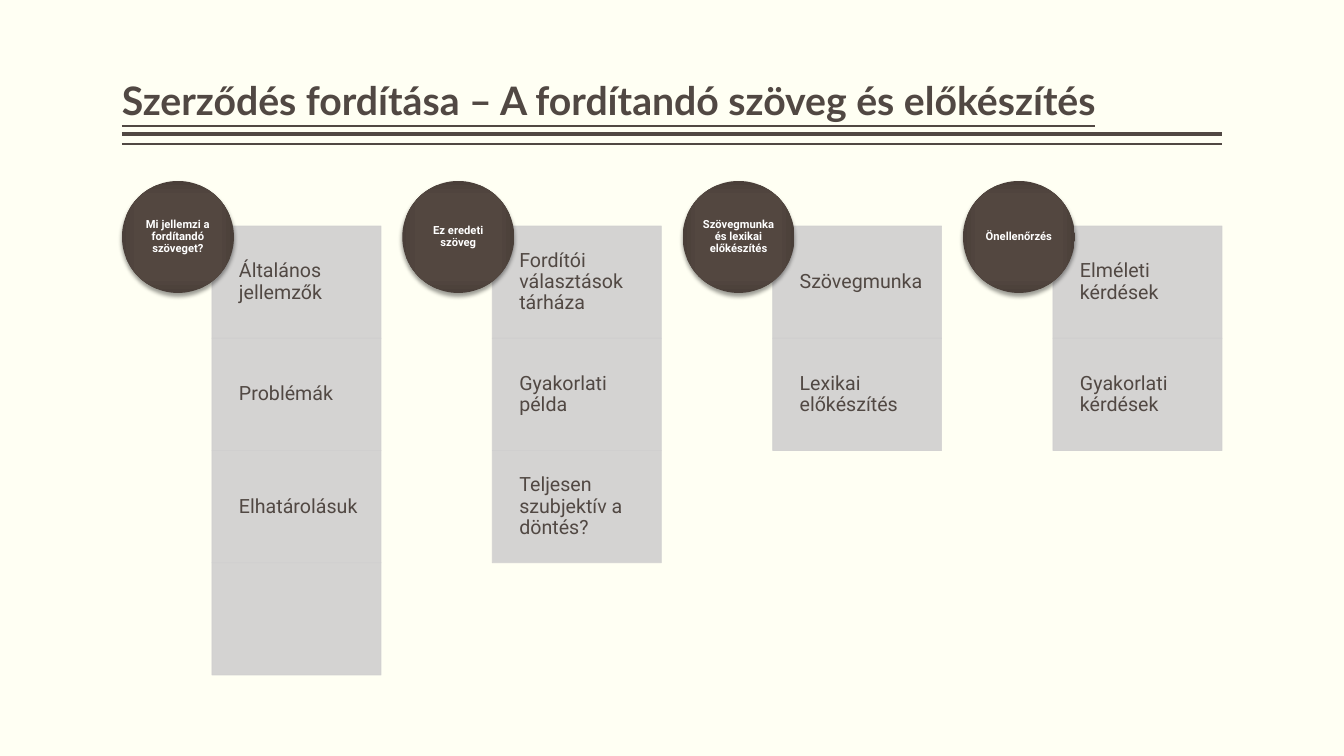
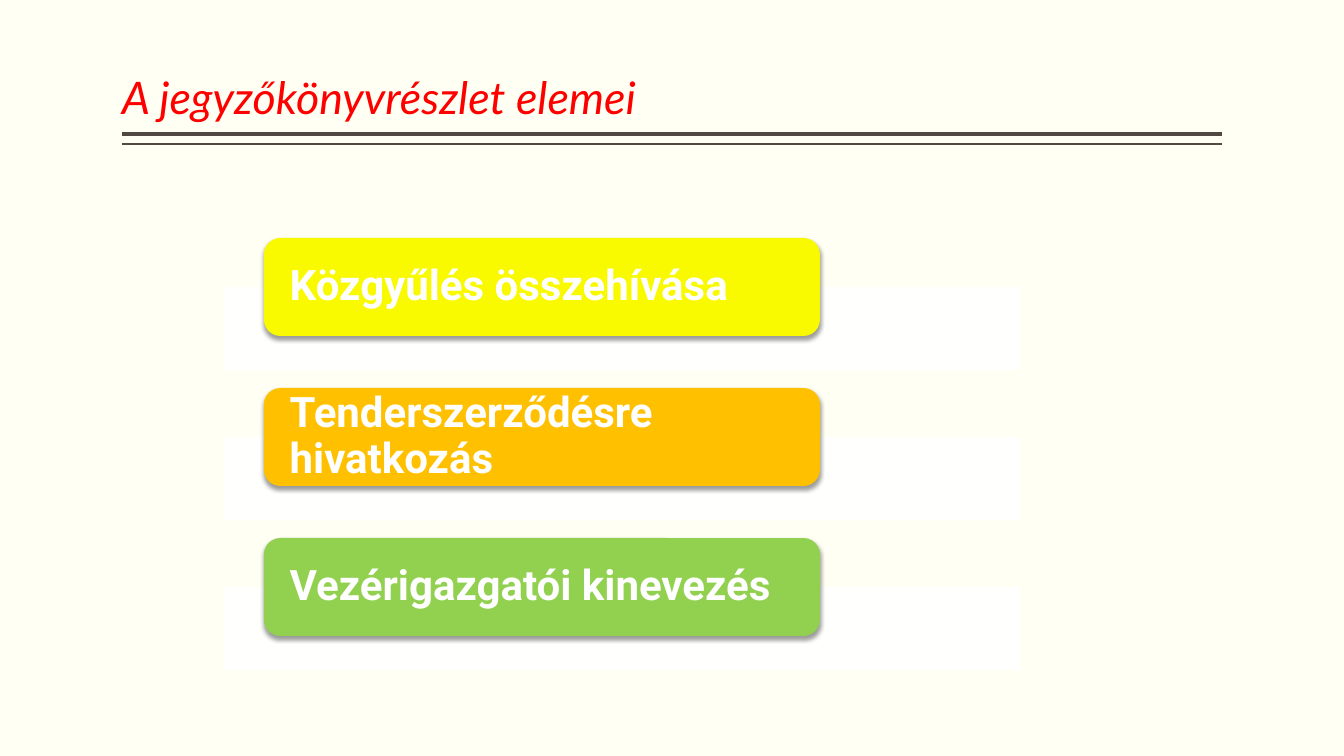
from pptx import Presentation
from pptx.dml.color import RGBColor
from pptx.enum.shapes import MSO_CONNECTOR, MSO_SHAPE as SHAPE
from pptx.enum.text import MSO_ANCHOR as ANCHOR, PP_ALIGN as ALIGN
from pptx.oxml import parse_xml
from pptx.oxml.ns import nsdecls, qn
from pptx.util import Pt
from lxml.etree import SubElement

CREAM = RGBColor(0xFF, 0xFF, 0xF3)
BROWN = RGBColor(0x51, 0x48, 0x43)
GREY = RGBColor(0xD0, 0xCF, 0xCF)
WHITE = RGBColor(0xFF, 0xFF, 0xFF)
RED = RGBColor(0xFF, 0x00, 0x00)
YELLOW = RGBColor(0xF9, 0xF9, 0x00)
ORANGE = RGBColor(0xFF, 0xC0, 0x00)
GREEN = RGBColor(0x92, 0xD0, 0x50)

PX = 914400 / 100.8
LEFT, WIDTH = 122, 1100

CIRCLE_FILL = f"""<a:gradFill {nsdecls('a')} rotWithShape="1"><a:gsLst>
<a:gs pos="0"><a:srgbClr val="544740"/></a:gs>
<a:gs pos="71000"><a:srgbClr val="534740"/></a:gs>
<a:gs pos="100000"><a:srgbClr val="4A3F39"/></a:gs></a:gsLst>
<a:path path="rect"><a:fillToRect l="50000" t="50000" r="50000" b="50000"/></a:path>
</a:gradFill>"""
SHADOW = f"""<a:outerShdw {nsdecls('a')} blurRad="39370" dist="25400" dir="5400000" rotWithShape="0">
<a:srgbClr val="000000"><a:alpha val="38000"/></a:srgbClr></a:outerShdw>"""


def write(sp, text, size=14, font="Roboto", color=WHITE, bold=False, italic=False,
          underline=False, align=ALIGN.LEFT, anchor=ANCHOR.MIDDLE, insets=(0, 0, 0, 0)):
    """Fill a shape with one paragraph; insets are left, top, right, bottom in px."""
    tf = sp.text_frame
    tf.word_wrap = True
    tf.vertical_anchor = anchor
    tf.margin_left, tf.margin_top, tf.margin_right, tf.margin_bottom = [
        round(n * PX) for n in insets]
    p = tf.paragraphs[0]
    p.alignment = align
    p.line_spacing = 0.9
    r = p.add_run()
    r.text = text
    r.font.size, r.font.name, r.font.color.rgb = Pt(size), font, color
    r.font.bold, r.font.italic, r.font.underline = bold, italic, underline


def add_box(s, kind, x, y, w, h, fill=None, line=None, alpha=None, shadow=False):
    """Add a preset shape; without a fill colour it gets the circle gradient."""
    sp = s.shapes.add_shape(kind, *[round(n * PX) for n in (x, y, w, h)])
    spPr = sp._element.spPr
    if fill is None:
        sp.fill.gradient()
        spPr.replace(spPr.find(qn("a:gradFill")), parse_xml(CIRCLE_FILL))
    else:
        sp.fill.solid()
        sp.fill.fore_color.rgb = fill
    if line is None:
        sp.line.fill.background()
    else:
        sp.line.color.rgb = line
        sp.line.width = Pt(0.5)
    if alpha:
        for clr in spPr.iter(qn("a:srgbClr")):
            SubElement(clr, qn("a:alpha")).set("val", str(alpha * 1000))
    sp.shadow.inherit = False
    if shadow:
        spPr.find(qn("a:effectLst")).append(parse_xml(SHADOW))
    return sp


prs = Presentation()
prs.slide_width, prs.slide_height = round(1344 * PX), round(756 * PX)
background = prs.slide_master.background.fill
background.solid()
background.fore_color.rgb = CREAM

# Title and double rule on every slide
titles = [
    ("Szerződés fordítása – A fordítandó szöveg és előkészítés",
     dict(size=28, color=BROWN, bold=True, underline=True)),
    ("A jegyzőkönyvrészlet elemei", dict(size=32, color=RED, italic=True)),
]
slides = []
for title, style in titles:
    s = prs.slides.add_slide(prs.slide_layouts[6])
    slides.append(s)
    for y, weight in ((134, 3), (144, 1)):
        rule = s.shapes.add_connector(MSO_CONNECTOR.STRAIGHT, *[
            round(n * PX) for n in (LEFT, y, LEFT + WIDTH, y)])
        rule.line.color.rgb = BROWN
        rule.line.width = Pt(weight)
        SubElement(rule._element.spPr, qn("a:effectLst"))
    sp = s.shapes.add_textbox(*[round(n * PX) for n in (LEFT, 8, WIDTH, 121)])
    write(sp, title, font="Lato", anchor=ANCHOR.BOTTOM, insets=(0, 5, 0, 5), **style)

# Slide 1: four columns of cells, each headed by a circle
columns = [
    ("Mi jellemzi a fordítandó szöveget?",
     ["Általános jellemzők", "Problémák", "Elhatárolásuk", ""]),
    ("Ez eredeti szöveg",
     ["Fordítói választások tárháza", "Gyakorlati példa", "Teljesen szubjektív a döntés?"]),
    ("Szövegmunka és lexikai előkészítés", ["Szövegmunka", "Lexikai előkészítés"]),
    ("Önellenőrzés", ["Elméleti kérdések", "Gyakorlati kérdések"]),
]
CELL_INDENT, CELL_W, CELL_TOP, CELL_BOTTOM = 90, 169, 226, 675
CIRCLE_TOP, CIRCLE_D = 181, 112
cell_h = (CELL_BOTTOM - CELL_TOP) / 4
column_step = (WIDTH - CELL_INDENT - CELL_W) / (len(columns) - 1)
for i, (heading, cells) in enumerate(columns):
    x = LEFT + i * column_step
    for j, text in enumerate(cells):
        sp = add_box(slides[0], SHAPE.RECTANGLE, x + CELL_INDENT, CELL_TOP + j * cell_h,
                     CELL_W, cell_h, fill=GREY, line=GREY, alpha=90)
        if text:
            write(sp, text, color=BROWN, insets=(27, 11, 11, 11))
    sp = add_box(slides[0], SHAPE.OVAL, x, CIRCLE_TOP, CIRCLE_D, CIRCLE_D, shadow=True)
    write(sp, heading, size=8, bold=True, align=ALIGN.CENTER)

# Slide 2: coloured labels over white bars
labels = [("Közgyűlés összehívása", YELLOW), ("Tenderszerződésre hivatkozás", ORANGE),
          ("Vezérigazgatói kinevezés", GREEN)]
LABEL_TOP, LABEL_STEP, BAR_DROP = 238, 150, 49
for i, (text, color) in enumerate(labels):
    y = LABEL_TOP + i * LABEL_STEP
    add_box(slides[1], SHAPE.RECTANGLE, 224, y + BAR_DROP, 796, 83, fill=WHITE, alpha=90)
    sp = add_box(slides[1], SHAPE.ROUNDED_RECTANGLE, 264, y, 556, 98, fill=color, shadow=True)
    write(sp, text, size=30, bold=True, insets=(21, 0, 21, 0))

prs.save("out.pptx")
